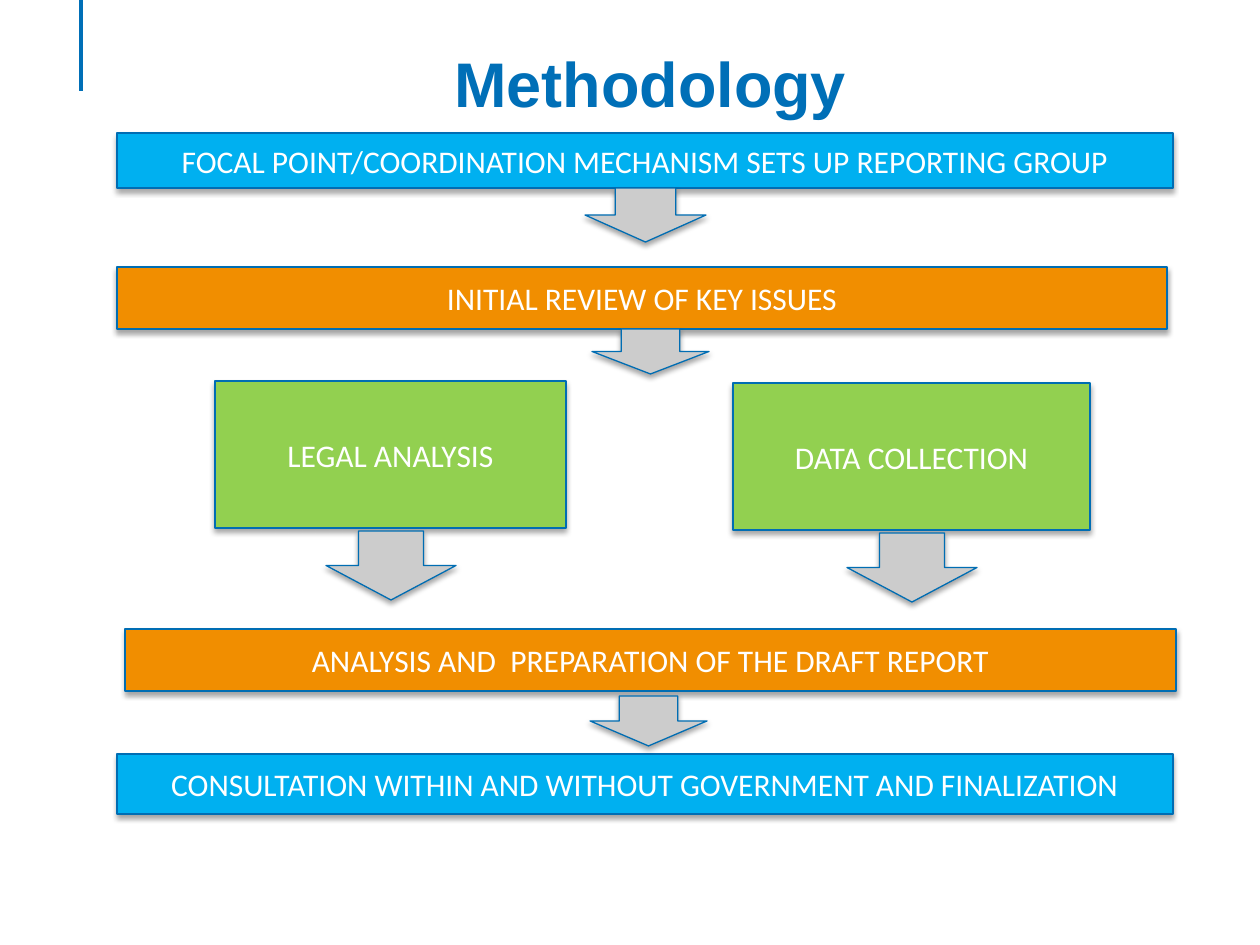
import lxml.etree
import pptx
import pptx.dml.color
import pptx.enum.shapes
import pptx.enum.text
import pptx.oxml.ns
import pptx.util

RGBColor = pptx.dml.color.RGBColor
BLUE = RGBColor(0x00, 0x6F, 0xB7)
OUTLINE = RGBColor(0x00, 0x6D, 0xB3)
SKY = RGBColor(0x00, 0xB0, 0xF0)
ORANGE = RGBColor(0xF1, 0x8E, 0x00)
GREEN = RGBColor(0x92, 0xD0, 0x50)
GREY = RGBColor(0xCC, 0xCC, 0xCC)
WHITE = RGBColor(0xFF, 0xFF, 0xFF)

PX = 914400 / 126
CENTER = pptx.enum.text.PP_ALIGN.CENTER
SHAPES = pptx.enum.shapes.MSO_SHAPE
qn = pptx.oxml.ns.qn


def px(*lengths):
    """Turn pixel lengths into EMU."""
    return [pptx.util.Emu(round(length * PX)) for length in lengths]


def add_shadowed_shape(kind, box, fill):
    shape = slide.shapes.add_shape(kind, *px(*box))
    shape.fill.solid()
    shape.fill.fore_color.rgb = fill
    shape.line.color.rgb = OUTLINE
    shape.line.width = pptx.util.Pt(0.75)
    shape.shadow.inherit = False
    effects = shape._element.spPr.find(qn("a:effectLst"))
    shadow = lxml.etree.SubElement(
        effects, qn("a:outerShdw"), blurRad=str(pptx.util.Pt(3.1)),
        dist=str(pptx.util.Pt(1.8)), dir="5400000", rotWithShape="0")
    color = lxml.etree.SubElement(shadow, qn("a:srgbClr"), val="000000")
    lxml.etree.SubElement(color, qn("a:alpha"), val="35000")
    return shape


presentation = pptx.Presentation()
presentation.slide_width, presentation.slide_height = px(1260, 945)
slide = presentation.slides.add_slide(presentation.slide_layouts[6])

accent = slide.shapes.add_connector(
    pptx.enum.shapes.MSO_CONNECTOR.STRAIGHT, *px(81, 0, 81, 91))
accent.line.color.rgb = BLUE
accent.line.width = pptx.util.Pt(2)
lxml.etree.SubElement(accent._element.spPr, qn("a:effectLst"))

title = slide.shapes.add_textbox(*px(98, 38, 1105, 150))
title.text_frame.word_wrap = True
title.text_frame.text = "Methodology"
paragraph = title.text_frame.paragraphs[0]
paragraph.alignment = CENTER
font = paragraph.runs[0].font
font.name, font.size, font.bold = "Arial", pptx.util.Pt(36), True
font.color.rgb = BLUE

steps = [
    ("FOCAL POINT/COORDINATION MECHANISM SETS UP REPORTING GROUP",
     (117, 133, 1056, 55), SKY),
    ("INITIAL REVIEW OF KEY ISSUES", (117, 267, 1050, 62), ORANGE),
    ("LEGAL ANALYSIS", (215, 381, 351, 147), GREEN),
    ("DATA COLLECTION", (733, 383, 357, 147), GREEN),
    ("ANALYSIS AND  PREPARATION OF THE DRAFT REPORT",
     (125, 629, 1051, 62), ORANGE),
    ("CONSULTATION WITHIN AND WITHOUT GOVERNMENT AND FINALIZATION",
     (117, 754, 1056, 60), SKY),
]
for text, box, fill in steps:
    step = add_shadowed_shape(SHAPES.RECTANGLE, box, fill)
    step.text_frame.word_wrap = True
    step.text_frame.vertical_anchor = pptx.enum.text.MSO_ANCHOR.MIDDLE
    step.text_frame.text = text
    paragraph = step.text_frame.paragraphs[0]
    paragraph.alignment = CENTER
    font = paragraph.runs[0].font
    font.name, font.size = "Calibri", pptx.util.Pt(18)
    font.color.rgb = WHITE

arrows = [
    (585, 188, 121, 54),
    (592, 329, 117, 45),
    (326, 531, 130, 69),
    (847, 533, 130, 69),
    (590, 696, 117, 50),
]
for box in arrows:
    add_shadowed_shape(SHAPES.DOWN_ARROW, box, GREY)

presentation.save("out.pptx")
